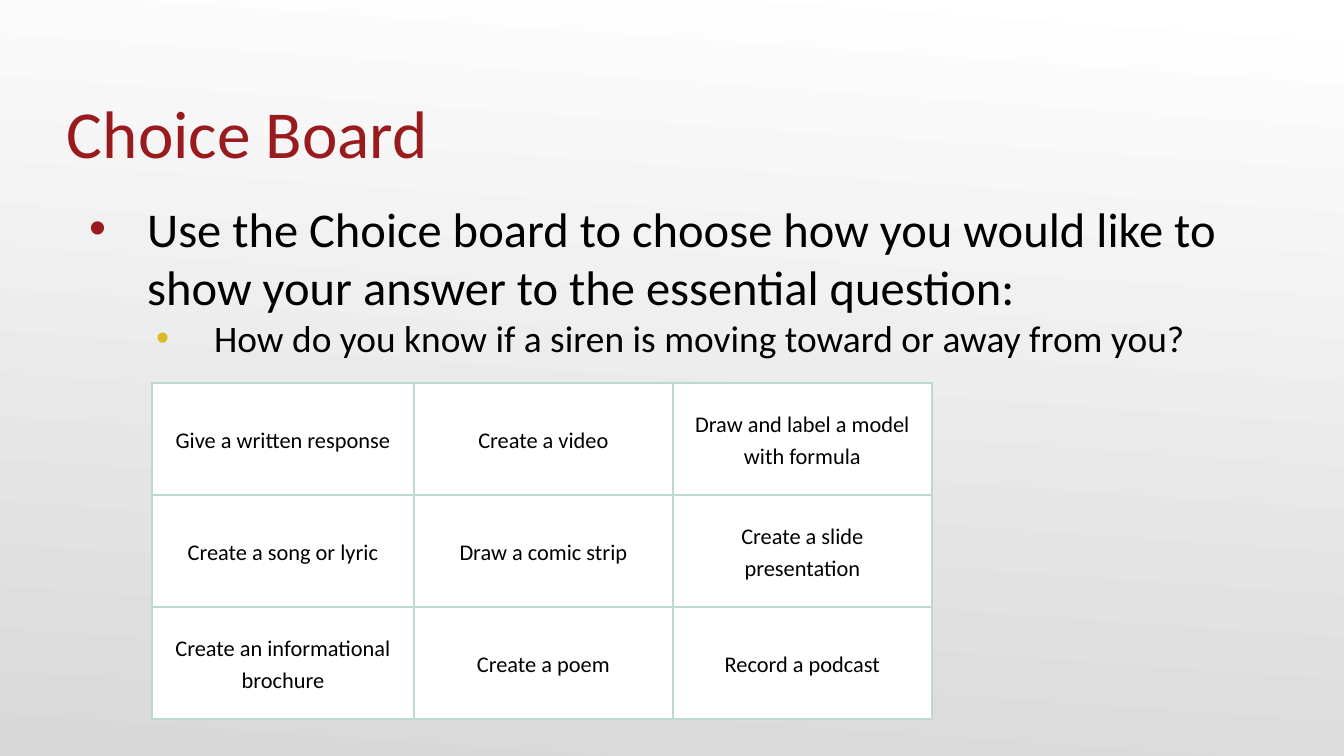
from lxml.etree import SubElement
from pptx import Presentation
from pptx.dml.color import RGBColor
from pptx.enum.text import MSO_ANCHOR, MSO_AUTO_SIZE, PP_ALIGN
from pptx.oxml.ns import qn
from pptx.util import Pt

# Content
TITLE = "Choice Board"
RED = RGBColor(0x99, 0x1B, 0x1E)
GOLD = RGBColor(0xDC, 0xBA, 0x25)
BLACK = RGBColor(0x00, 0x00, 0x00)
WHITE = RGBColor(0xFF, 0xFF, 0xFF)
GRAY = RGBColor(0xD8, 0xD8, 0xD8)
MINT = RGBColor(0xBE, 0xD7, 0xD3)
BULLETS = [  # text, size, left margin in px, bullet colour
    ("Use the Choice board to choose how you would like to show your answer "
     "to the essential question:", 26, 67, RED),
    ("How do you know if a siren is moving toward or away from you?", 20, 134, GOLD),
]
CHOICES = [
    ["Give a written response", "Create a video", "Draw and label a model with formula"],
    ["Create a song or lyric", "Draw a comic strip", "Create a slide presentation"],
    ["Create an informational brochure", "Create a poem", "Record a podcast"],
]
FONT = "Calibri"
COLUMN_WIDTHS = [262, 259, 259]
ROW_HEIGHT = 112
HANGING = 58


def px(length):
    return round(length * 914400 / 134.4)


def place(shape, left, top, width, height):
    shape.left, shape.top = px(left), px(top)
    shape.width, shape.height = px(width), px(height)


def set_font(paragraph, size, color):
    for run in paragraph.runs:
        run.font.name = FONT
        run.font.size = Pt(size)
        run.font.color.rgb = color


def add_bullet(paragraph, margin, color):
    properties = paragraph._p.get_or_add_pPr()
    properties.set("marL", str(px(margin)))
    properties.set("indent", str(-px(HANGING)))
    bullet_color = SubElement(properties, qn("a:buClr"))
    SubElement(bullet_color, qn("a:srgbClr"), val=str(color))
    SubElement(properties, qn("a:buFont"), typeface="Arial")
    SubElement(properties, qn("a:buChar"), char="•")


def add_borders(cell, color):
    properties = cell._tc.get_or_add_tcPr()
    for side in ("a:lnL", "a:lnR", "a:lnT", "a:lnB"):
        line = SubElement(properties, qn(side), w=str(Pt(1)))
        fill = SubElement(line, qn("a:solidFill"))
        SubElement(fill, qn("a:srgbClr"), val=str(color))


presentation = Presentation()
presentation.slide_width, presentation.slide_height = px(1344), px(756)
slide = presentation.slides.add_slide(presentation.slide_layouts[5])

# Background
background = slide.background.fill
background.gradient()
background.gradient_angle = 266
for stop, color in zip(background.gradient_stops, (WHITE, GRAY)):
    stop.color.rgb = color
background.gradient_stops[0].position = 0
background.gradient_stops[1].position = 1

# Title
title = slide.shapes.title
place(title, 67, 46, 1210, 126)
frame = title.text_frame
frame.text = TITLE
frame.auto_size = MSO_AUTO_SIZE.NONE
frame.vertical_anchor = MSO_ANCHOR.BOTTOM
frame.margin_left = frame.margin_right = frame.margin_bottom = 0
frame.paragraphs[0].alignment = PP_ALIGN.LEFT
set_font(frame.paragraphs[0], 36, RED)

# Bulleted instructions
instructions = slide.shapes.add_textbox(0, 0, 0, 0)
place(instructions, 67, 192, 1210, 505)
frame = instructions.text_frame
frame.word_wrap = True
frame.text = "\n".join(bullet[0] for bullet in BULLETS)
for level, (paragraph, bullet) in enumerate(zip(frame.paragraphs, BULLETS)):
    text, size, margin, color = bullet
    paragraph.level = level
    add_bullet(paragraph, margin, color)
    set_font(paragraph, size, BLACK)

# Choice table
table = slide.shapes.add_table(
    len(CHOICES), len(COLUMN_WIDTHS), px(152), px(383),
    px(sum(COLUMN_WIDTHS)), px(ROW_HEIGHT * len(CHOICES))).table
for column, width in zip(table.columns, COLUMN_WIDTHS):
    column.width = px(width)
for row, choices in zip(table.rows, CHOICES):
    row.height = px(ROW_HEIGHT)
    for cell, choice in zip(row.cells, choices):
        cell.text = choice
        cell.vertical_anchor = MSO_ANCHOR.MIDDLE
        cell.margin_left = cell.margin_right = px(9)
        cell.margin_top = cell.margin_bottom = 0
        add_borders(cell, MINT)
        cell.fill.solid()
        cell.fill.fore_color.rgb = WHITE
        paragraph = cell.text_frame.paragraphs[0]
        paragraph.alignment = PP_ALIGN.CENTER
        paragraph.line_spacing = 1.15
        paragraph.space_after = Pt(6)
        set_font(paragraph, 12, BLACK)

presentation.save("out.pptx")
